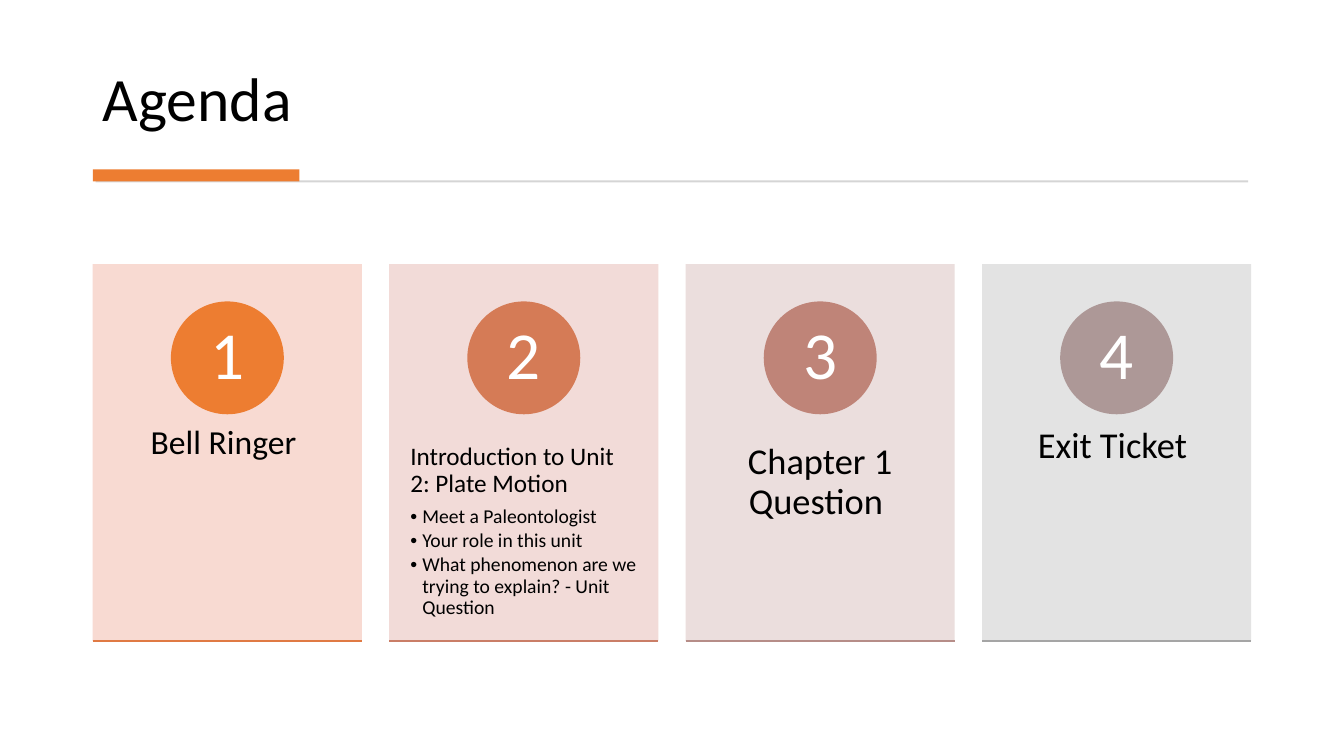
import lxml.etree
import pptx
import pptx.dml.color
import pptx.enum.shapes
import pptx.enum.text
import pptx.oxml.ns
import pptx.util

Inches, Pt = pptx.util.Inches, pptx.util.Pt
RGB = pptx.dml.color.RGBColor.from_string
SHAPE = pptx.enum.shapes.MSO_SHAPE
ALIGN = pptx.enum.text.PP_ALIGN
ANCHOR = pptx.enum.text.MSO_ANCHOR
qn = pptx.oxml.ns.qn

COLORS = {"text": "000000", "number": "FFFFFF", "rule": "D5D5D5", "accent": "ED7D31"}

LEFT, CARD_TOP = 0.92, 2.62
CARD_WIDTH, CARD_HEIGHT, CARD_STEP = 2.67, 3.74, 2.94
LABEL_TOP, LABEL_HEIGHT = 4.04, 2.25
CIRCLE_TOP, CIRCLE_SIZE = 2.99, 1.12

CARDS = [
    {"label": "Bell Ringer ", "size": 24, "align": ALIGN.CENTER, "bullets": [],
     "card": "F8D7CE", "circle": "ED7D31", "edge": "E07A44"},
    {"label": "Introduction to Unit 2: Plate Motion ", "size": 18, "align": ALIGN.LEFT,
     "bullets": ["Meet a Paleontologist ", "Your role in this unit",
                 "What phenomenon are we trying to explain? - Unit Question"],
     "card": "F1D8D4", "circle": "D57B56", "edge": "CA7E67"},
    {"label": "Chapter 1 Question ", "size": 26, "align": ALIGN.CENTER, "bullets": [],
     "card": "E9DBDA", "circle": "BF8478", "edge": "B68D88"},
    {"label": "Exit Ticket ", "size": 26, "align": ALIGN.CENTER, "bullets": [],
     "card": "E1E1E1", "circle": "AD9897", "edge": "A5A5A5"},
]


def add_filled_shape(kind, left, top, width, height, color):
    shape = slide.shapes.add_shape(
        kind, Inches(left), Inches(top), Inches(width), Inches(height))
    shape.shadow.inherit = False
    shape.fill.solid()
    shape.fill.fore_color.rgb = RGB(color)
    shape.line.fill.background()
    return shape


def write_paragraph(paragraph, text, size, color, align=ALIGN.LEFT, after=0, bullet=False):
    paragraph.text = text
    layout = {"alignment": align, "line_spacing": 0.9, "space_before": Pt(0),
              "space_after": Pt(after), "level": int(bullet)}
    for name, value in layout.items():
        setattr(paragraph, name, value)
    if bullet:
        properties = paragraph._p.get_or_add_pPr()
        properties.set("marL", str(Inches(0.12)))
        properties.set("indent", str(-Inches(0.12)))
        lxml.etree.SubElement(properties, qn("a:buFont")).set("typeface", "Arial")
        lxml.etree.SubElement(properties, qn("a:buChar")).set("char", "•")
    for name, value in {"name": "Calibri", "size": Pt(size)}.items():
        setattr(paragraph.font, name, value)
    paragraph.font.color.rgb = RGB(color)


presentation = pptx.Presentation()
presentation.slide_width, presentation.slide_height = Inches(13.33), Inches(7.5)
slide = presentation.slides.add_slide(presentation.slide_layouts[5])

title = slide.shapes.title
title_place = {"left": LEFT, "top": 0.28, "width": 11.49, "height": 1.11}
for name, value in title_place.items():
    setattr(title, name, Inches(value))
title.text_frame.auto_size = pptx.enum.text.MSO_AUTO_SIZE.NONE
title.text_frame.vertical_anchor = ANCHOR.BOTTOM
write_paragraph(title.text_frame.paragraphs[0], "Agenda ", 44, COLORS["text"])

add_filled_shape(SHAPE.RECTANGLE, 0.95, 1.79, 11.43, 0.02, COLORS["rule"])
add_filled_shape(SHAPE.RECTANGLE, LEFT, 1.68, 2.05, 0.12, COLORS["accent"])

for index, item in enumerate(CARDS):
    left = LEFT + index * CARD_STEP

    card = add_filled_shape(
        SHAPE.RECTANGLE, left, CARD_TOP, CARD_WIDTH, CARD_HEIGHT, item["card"])
    card_color = card._element.spPr.find(qn("a:solidFill"))[0]
    lxml.etree.SubElement(card_color, qn("a:alpha")).set("val", "90000")

    label = slide.shapes.add_textbox(
        Inches(left), Inches(LABEL_TOP), Inches(CARD_WIDTH), Inches(LABEL_HEIGHT))
    frame = label.text_frame
    frame.word_wrap = True
    for side, margin in {"left": 0.21, "right": 0.21, "top": 0.36, "bottom": 0.36}.items():
        setattr(frame, f"margin_{side}", Inches(margin))
    write_paragraph(frame.paragraphs[0], item["label"], item["size"], COLORS["text"],
                    item["align"], after=item["size"] * 0.35)
    for text in item["bullets"]:
        write_paragraph(frame.add_paragraph(), text, 14, COLORS["text"],
                        after=14 * 0.15, bullet=True)

    circle = add_filled_shape(
        SHAPE.OVAL, left + (CARD_WIDTH - CIRCLE_SIZE) / 2, CIRCLE_TOP,
        CIRCLE_SIZE, CIRCLE_SIZE, item["circle"])
    frame = circle.text_frame
    frame.vertical_anchor = ANCHOR.MIDDLE
    for side, margin in {"left": 0.09, "right": 0.09, "top": 0.01, "bottom": 0.01}.items():
        setattr(frame, f"margin_{side}", Inches(margin))
    write_paragraph(frame.paragraphs[0], str(index + 1), 48, COLORS["number"], ALIGN.CENTER)

    bottom = Inches(CARD_TOP + CARD_HEIGHT)
    edge = slide.shapes.add_connector(
        pptx.enum.shapes.MSO_CONNECTOR.STRAIGHT,
        Inches(left), bottom, Inches(left + CARD_WIDTH), bottom)
    edge.line.color.rgb = RGB(item["edge"])
    edge.line.width = Pt(1)
    lxml.etree.SubElement(edge._element.spPr, qn("a:effectLst"))

presentation.save("out.pptx")
